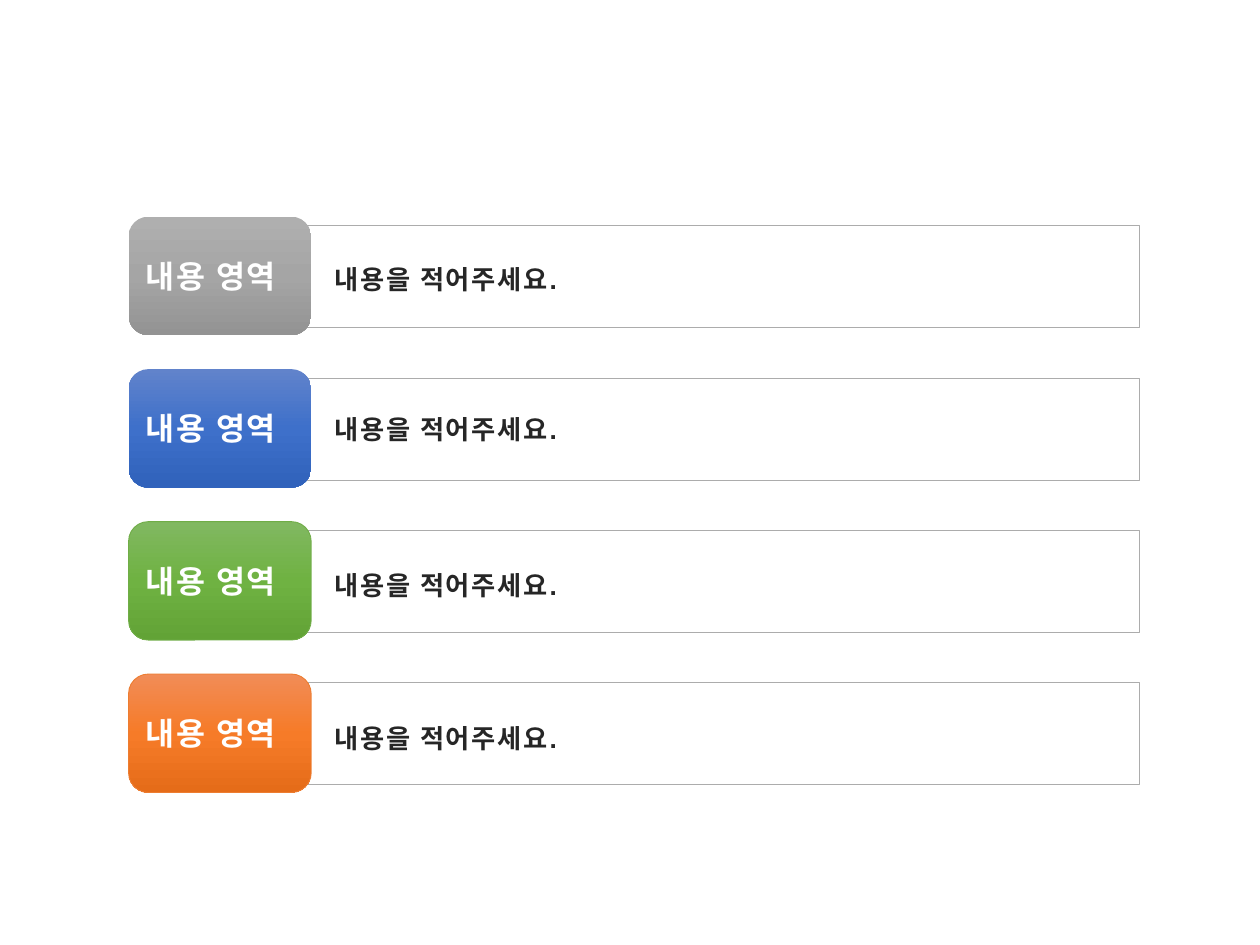
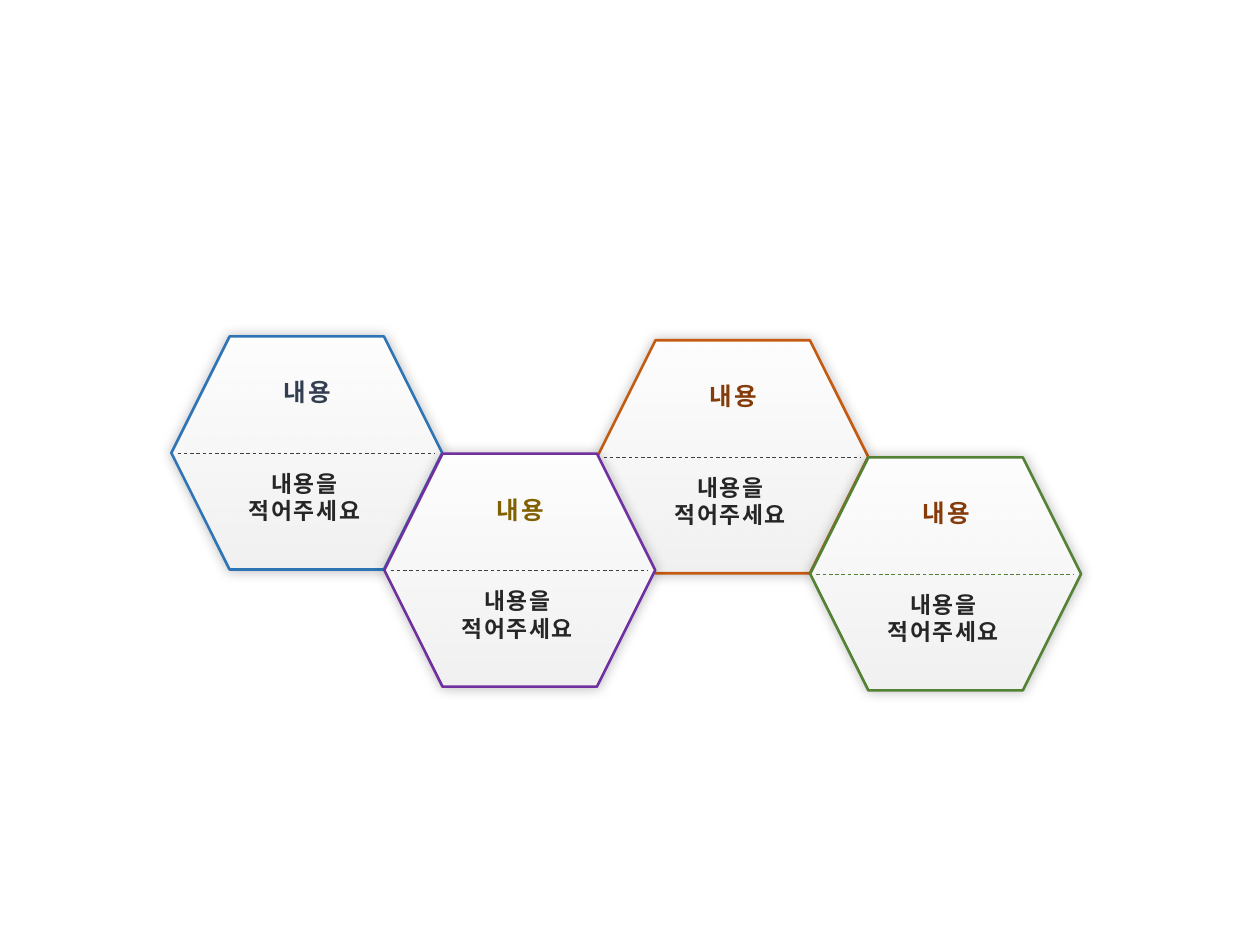
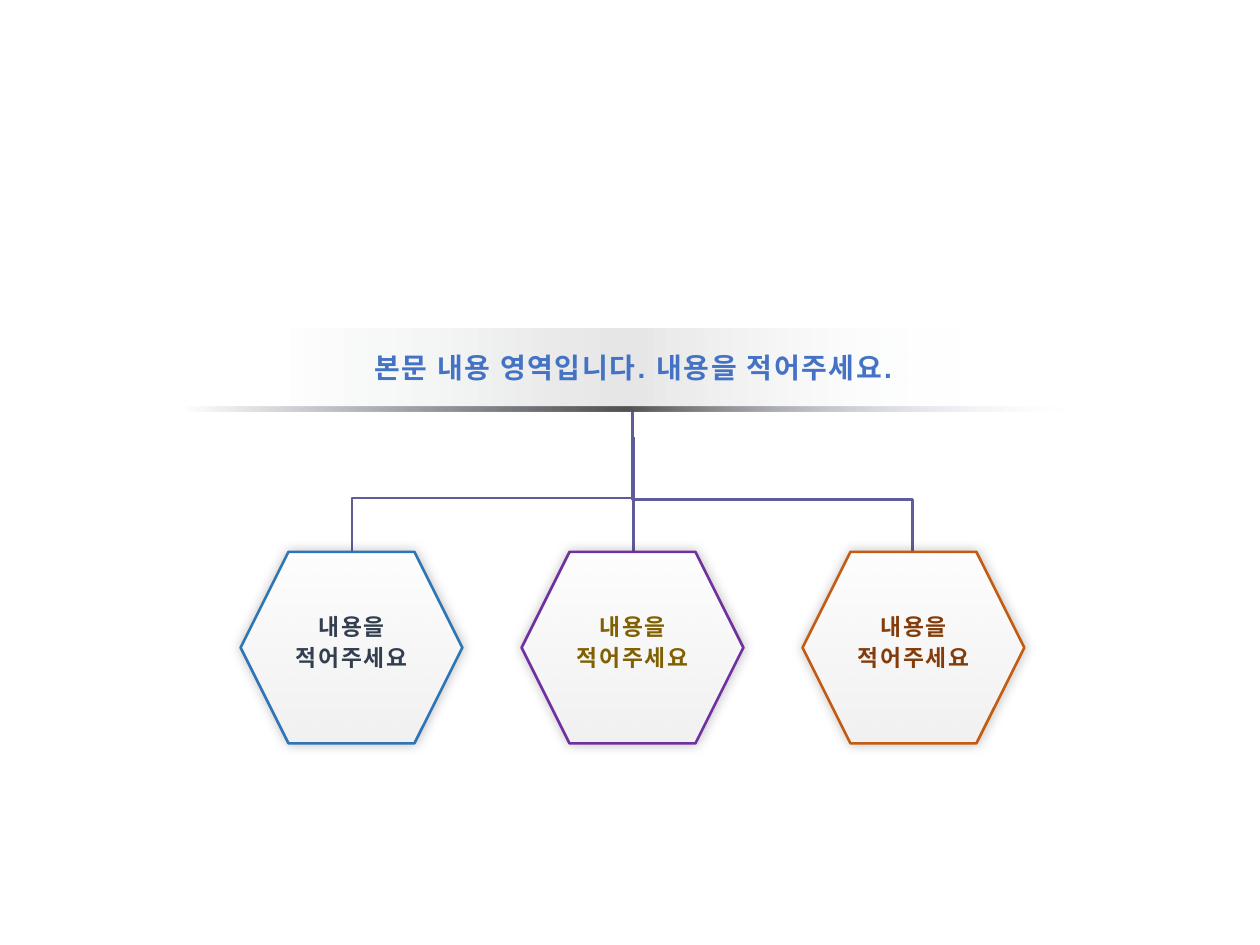
import pptx
import pptx.util
import pptx.dml.color
import pptx.enum.dml
import pptx.enum.shapes
import pptx.enum.text
import pptx.oxml.ns
import lxml.etree

Inches = pptx.util.Inches
Pt = pptx.util.Pt
qn = pptx.oxml.ns.qn
SHAPE = pptx.enum.shapes.MSO_SHAPE
LINK = pptx.enum.shapes.MSO_CONNECTOR
CENTER = pptx.enum.text.PP_ALIGN.CENTER
LEFT = pptx.enum.text.PP_ALIGN.LEFT

COLORS = {
    "white": "FFFFFF", "ink": "262626", "frame": "ACACAC", "dash": "404040",
    "navy": "333F50", "gold": "806000", "rust": "843C0B", "blue": "4472C4",
    "sky": "2E75B6", "plum": "7030A0", "flame": "C55A11", "leaf": "548235",
    "stem": "5E5D99", "black": "000000", "fog": "E1EBFB", "pale": "F2F2F2",
    "slate": "525252", "grass": "70AD47", "orange": "ED7D31",
}
TILES = {
    "gray": ("AFAFAF", "A5A5A5", "939393"),
    "blue": ("6183CB", "3E70CA", "3062BB"),
    "green": ("81B861", "6FB242", "62A336"),
    "orange": ("F18C57", "F67B28", "E56C19"),
}
CELL_FILL = [(0, COLORS["white"], 100), (100, COLORS["pale"], 100), (100, COLORS["fog"], 0)]
FONT = {"name": "Arial", "bold": True}
ASK = ["내용을", "적어주세요"]


def rgb(name):
    return pptx.dml.color.RGBColor.from_string(COLORS[name])


def add_tag(parent, tag, **attrs):
    return lxml.etree.SubElement(parent, qn(tag), {k: str(v) for k, v in attrs.items()})


def add_tint(parent, color, alpha):
    tint = add_tag(parent, "a:srgbClr", val=color)
    if alpha < 100:
        add_tag(tint, "a:alpha", val=alpha * 1000)


def set_grad(shape, stops, angle):
    props = shape.element.spPr
    grad = add_tag(props, "a:gradFill", rotWithShape=1)
    stop_list = add_tag(grad, "a:gsLst")
    for place, color, alpha in stops:
        add_tint(add_tag(stop_list, "a:gs", pos=place * 1000), color, alpha)
    add_tag(grad, "a:lin", ang=angle * 60000, scaled=0)
    props.find(qn("a:prstGeom")).addnext(grad)


def set_line(line, color, width, dash=None):
    line.color.rgb = rgb(color)
    for key, value in {"width": Pt(width), "dash_style": dash}.items():
        setattr(line, key, value)


def add_box(shapes, kind, x, y, w, h, stops=None, angle=90, edge=None, width=0.5):
    box = shapes.add_shape(kind, Inches(x), Inches(y), Inches(w), Inches(h))
    box.shadow.inherit = False
    if stops:
        set_grad(box, stops, angle)
    else:
        box.fill.solid()
        box.fill.fore_color.rgb = rgb("white")
    if edge:
        set_line(box.line, edge, width)
    else:
        box.line.fill.background()
    return box


def add_cell(shapes, x, y, w, h, edge):
    cell = add_box(shapes, SHAPE.HEXAGON, x, y, w, h, CELL_FILL, 90, edge, 1.5)
    glow = cell.element.spPr.find(qn("a:effectLst"))
    shade = add_tag(glow, "a:outerShdw", blurRad=Pt(7), dist=0, dir=0, algn="ctr", rotWithShape=0)
    add_tint(shade, COLORS["black"], 25)


def add_link(shapes, kind, start, end, color, width, dash=None):
    link = shapes.add_connector(kind, *(Inches(v) for v in start + end))
    set_line(link.line, color, width, dash)
    add_tag(link.element.spPr, "a:effectLst")
    return link


def add_bend(shapes, start, end, turn, bend):
    link = add_link(shapes, LINK.ELBOW, start, end, "stem", 1.5)
    link.rotation = turn
    props = link.element.spPr
    props.find(qn("a:xfrm")).set("rot", str(turn * 60000))
    guides = props.find(qn("a:prstGeom")).find(qn("a:avLst"))
    add_tag(guides, "a:gd", name="adj1", fmla=f"val {bend}")


def add_text(shapes, x, y, w, h, lines, size, color, align=CENTER, space=None, wrap=True):
    frame = shapes.add_textbox(Inches(x), Inches(y), Inches(w), Inches(h)).text_frame
    frame.word_wrap = wrap
    frame.auto_size = pptx.enum.text.MSO_AUTO_SIZE.SHAPE_TO_FIT_TEXT
    for i, line in enumerate(lines):
        para = frame.add_paragraph() if i else frame.paragraphs[0]
        para.alignment = align
        para.line_spacing = space
        run = para.add_run()
        run.text = line
        for key, value in {**FONT, "size": Pt(size)}.items():
            setattr(run.font, key, value)
        run.font.color.rgb = rgb(color)
        run.font._element.set("spc", "100")


def draw_rows(shapes):
    rows = [("gray", None, 2.04), ("blue", None, 3.23),
            ("green", "grass", 4.47), ("orange", "orange", 5.68)]
    for i, (tile, edge, note_y) in enumerate(rows):
        drop = 1.21 * i
        group = shapes.add_group_shape().shapes
        add_box(group, SHAPE.RECTANGLE, 1.92, 1.79 + drop, 7.12, 0.81, edge="frame")
        stops = [(50 * n, color, 100) for n, color in enumerate(TILES[tile])]
        add_box(group, SHAPE.ROUNDED_RECTANGLE, 1.02, 1.72 + drop, 1.45, 0.94, stops, edge=edge)
        add_text(shapes, 1.06, 1.99 + drop, 1.37, 0.4, ["내용 영역"], 18, "white", LEFT, wrap=False)
        add_text(shapes, 2.56, note_y, 6.47, 0.35, ["내용을 적어주세요."], 15, "ink", LEFT)


def draw_chain(shapes):
    cells = [(2, "flame", "dash", "rust"), (0, "sky", "dash", "navy"),
             (1, "plum", "dash", "gold"), (3, "leaf", "leaf", "rust")]
    for i, edge, dash, head in cells:
        x = 1.36 + 1.69 * i
        y = 2.67 + 0.93 * (i % 2) + 0.03 * (i // 2)
        group = shapes.add_group_shape().shapes
        add_cell(group, x, y, 2.15, 1.85, edge)
        add_link(group, LINK.STRAIGHT, (x + 0.05, y + 0.93), (x + 2.09, y + 0.93),
                 dash, 0.5, pptx.enum.dml.MSO_LINE.DASH)
        add_text(shapes, x + 0.22, y + 0.26, 1.72, 0.35, ["내용"], 14, head, space=Pt(18))
        add_text(shapes, x + 0.28, y + 1.01, 1.55, 0.54, ASK, 13, "ink")


def draw_tree(shapes):
    add_bend(shapes, (4.94, 5.56), (7.32, 3.34), 270, 70400)
    add_bend(shapes, (5.1, 5.56), (2.72, 3.33), 90, 70700)
    add_link(shapes, LINK.STRAIGHT, (5.03, 3.47), (5.03, 4.85), "stem", 1.5)
    ends = (0, COLORS["navy"], 0), (100, COLORS["fog"], 0)
    band = [ends[0], (50, COLORS["black"], 10), ends[1]]
    rule = [ends[0], (50, COLORS["slate"], 100), ends[1]]
    add_box(shapes, SHAPE.RECTANGLE, 2.26, 2.61, 5.42, 0.61, band, 0)
    for i, (edge, ink) in enumerate([("sky", "navy"), ("plum", "gold"), ("flame", "rust")]):
        x = 1.91 + 2.23 * i
        add_cell(shapes, x, 4.38, 1.76, 1.52, edge)
        add_text(shapes, x + 0.02, 4.78, 1.72, 0.61, ASK, 13, ink, space=Pt(18))
    add_box(shapes, SHAPE.RECTANGLE, 1.47, 3.23, 7, 0.04, rule, 0)
    add_text(shapes, 1.79, 2.73, 6.47, 0.37, ["본문 내용 영역입니다. 내용을 적어주세요."], 16, "blue")


def main():
    deck = pptx.Presentation()
    deck.slide_width, deck.slide_height = Inches(10), Inches(7.5)
    for draw in (draw_rows, draw_chain, draw_tree):
        draw(deck.slides.add_slide(deck.slide_layouts[6]).shapes)
    deck.save("out.pptx")


if __name__ == "__main__":
    main()
